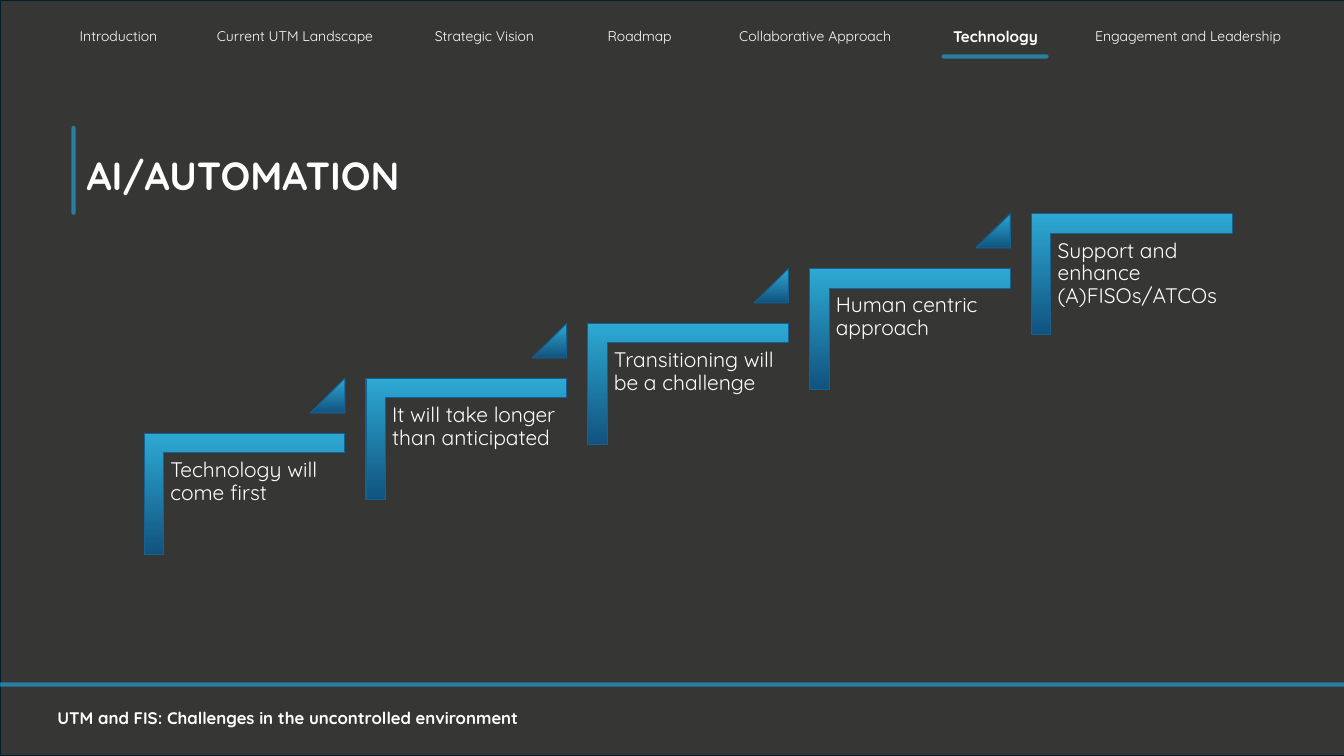
from lxml.etree import SubElement
from pptx import Presentation
from pptx.dml.color import RGBColor
from pptx.enum.shapes import MSO_CONNECTOR, MSO_SHAPE
from pptx.enum.text import MSO_ANCHOR, MSO_AUTO_SIZE, PP_ALIGN
from pptx.oxml.ns import qn
from pptx.util import Inches, Pt

# Content
TITLE = "AI/AUTOMATION"
FOOTER = "UTM and FIS: Challenges in the uncontrolled environment"
STEPS = [
    "Technology will come first",
    "It will take longer than anticipated",
    "Transitioning will be a challenge",
    "Human centric approach",
    "Support and enhance (A)FISOs/ATCOs",
]
SECTIONS = [  # label, column width
    ("Introduction", 1.41),
    ("Current UTM Landscape", 2.09),
    ("Strategic Vision", 1.67),
    ("Roadmap", 1.41),
    ("Collaborative Approach", 2.07),
    ("Technology", 1.51),
    ("Engagement and Leadership", 2.31),
]
CURRENT = "Technology"

THEME = {
    "font": "Quicksand",
    "text": "FFFFFF",
    "ground": "363634",
    "frame": "021E2B",
    "accent": "1FB1EB",
    "step_top": "2DA9D4",
    "step_bottom": "11537F",
    "step_line": "146194",
    "title": 28,
    "step": 15,
    "footer": 12,
    "section": 10,
    "current": 11,
}

# Layout, in inches
WIDTH, HEIGHT = 13.33, 7.5
STEP_LEFT, STEP_TOP = 1.43, 4.3
STEP_PITCH, STEP_RISE = 2.2, 0.545
STEP_WIDTH, STEP_HEIGHT = 1.99, 1.2
BAR_SHARE = 0.161
MARKER = 0.34
NAV_LEFT, NAV_TOP, NAV_HEIGHT = 0.47, 0.22, 0.41
RULES = [  # start x, start y, end x, end y
    (-0.22, 6.79, 13.46, 6.79),
    (0.73, 1.27, 0.73, 2.11),
    (9.36, 0.56, 10.38, 0.56),
]
NO_GRID_STYLE = "{2D5ABB26-0587-4C30-8999-92F81FD0307C}"


def color(name):
    return RGBColor.from_string(THEME[name])


def write(frame, text, size, bold=False, **para_format):
    para = frame.paragraphs[0]
    for name, value in para_format.items():
        setattr(para, name, value)
    span = para.add_run()
    span.text = text
    for name, value in {"name": THEME["font"], "size": Pt(THEME[size]), "bold": bold}.items():
        setattr(span.font, name, value)
    span.font.color.rgb = color("text")


def add_text(page, place, text, size, inset=None, **text_format):
    frame = page.shapes.add_textbox(*map(Inches, place)).text_frame
    frame.word_wrap = True
    if inset is not None:
        for side in ("left", "top", "right", "bottom"):
            setattr(frame, f"margin_{side}", Inches(inset))
    write(frame, text, size, **text_format)


def add_box(page, kind, place, line, weight):
    box = page.shapes.add_shape(kind, *map(Inches, place))
    box.shadow.inherit = False
    box.line.color.rgb = color(line)
    box.line.width = Pt(weight)
    return box


def add_step_shape(page, kind, place, adjustments):
    box = add_box(page, kind, place, "step_line", 0.75)
    for index, value in enumerate(adjustments):
        box.adjustments[index] = value
    box.fill.gradient()
    box.fill.gradient_angle = 270
    for stop, name in zip(box.fill.gradient_stops, ("step_top", "step_bottom")):
        stop.color.rgb = color(name)
    # The gradient stays vertical when the shape is turned
    box.element.spPr.find(qn("a:gradFill")).set("rotWithShape", "0")
    return box


def add_rule(page, ends):
    rule = page.shapes.add_connector(MSO_CONNECTOR.STRAIGHT, *map(Inches, ends))
    rule.line.color.rgb = color("accent")
    rule.line.width = Pt(3)
    properties = rule.element.spPr
    properties.find(qn("a:ln")).set("cap", "rnd")
    SubElement(next(properties.iter(qn("a:srgbClr"))), qn("a:alpha"), val="60000")
    SubElement(properties, qn("a:effectLst"))


def add_step(page, index, text):
    left = STEP_LEFT + index * STEP_PITCH
    top = STEP_TOP - index * STEP_RISE
    # A quarter turn swaps the sides about the same centre
    shift = (STEP_WIDTH - STEP_HEIGHT) / 2
    place = (left + shift, top - shift, STEP_HEIGHT, STEP_WIDTH)
    corner = add_step_shape(page, MSO_SHAPE.CORNER, place, (BAR_SHARE, BAR_SHARE))
    corner.rotation = 90
    add_text(page, (left + 0.2, top + 0.2, 1.8, 1.58), text, "step",
             inset=0.06, line_spacing=0.9)
    if index < len(STEPS) - 1:
        place = (left + STEP_WIDTH - MARKER, top - STEP_RISE, MARKER, MARKER)
        add_step_shape(page, MSO_SHAPE.ISOSCELES_TRIANGLE, place, (1,))


def add_navigation(page):
    total = sum(width for _, width in SECTIONS)
    place = (NAV_LEFT, NAV_TOP, total, NAV_HEIGHT)
    table = page.shapes.add_table(1, len(SECTIONS), *map(Inches, place)).table
    table.first_row = table.horz_banding = False
    next(table._tbl.iter(qn("a:tableStyleId"))).text = NO_GRID_STYLE
    for index, (label, width) in enumerate(SECTIONS):
        table.columns[index].width = Inches(width)
        cell = table.cell(0, index)
        cell.fill.background()
        active = label == CURRENT
        write(cell.text_frame, label, "current" if active else "section",
              bold=active, alignment=PP_ALIGN.CENTER)


def main():
    deck = Presentation()
    deck.slide_width, deck.slide_height = Inches(WIDTH), Inches(HEIGHT)
    page = deck.slides.add_slide(deck.slide_layouts[5])

    # Ground, behind the title
    ground = add_box(page, MSO_SHAPE.RECTANGLE, (0, 0, 13.41, HEIGHT), "frame", 1.25)
    ground.fill.solid()
    ground.fill.fore_color.rgb = color("ground")
    title = page.shapes.title
    title.element.addprevious(ground.element)

    # Title
    place = {"left": 0.76, "top": 0.91, "width": 9.33, "height": 1.65}
    for name, value in place.items():
        setattr(title, name, Inches(value))
    title.text_frame.auto_size = MSO_AUTO_SIZE.NONE
    title.text_frame.vertical_anchor = MSO_ANCHOR.MIDDLE
    write(title.text_frame, TITLE, "title", bold=True, alignment=PP_ALIGN.LEFT)

    # Staircase
    for index, text in enumerate(STEPS):
        add_step(page, index, text)

    # Footer, navigation and rules
    add_text(page, (0.47, 6.97, 6.68, 0.3), FOOTER, "footer", bold=True)
    add_navigation(page)
    for ends in RULES:
        add_rule(page, ends)

    deck.save("out.pptx")


if __name__ == "__main__":
    main()
